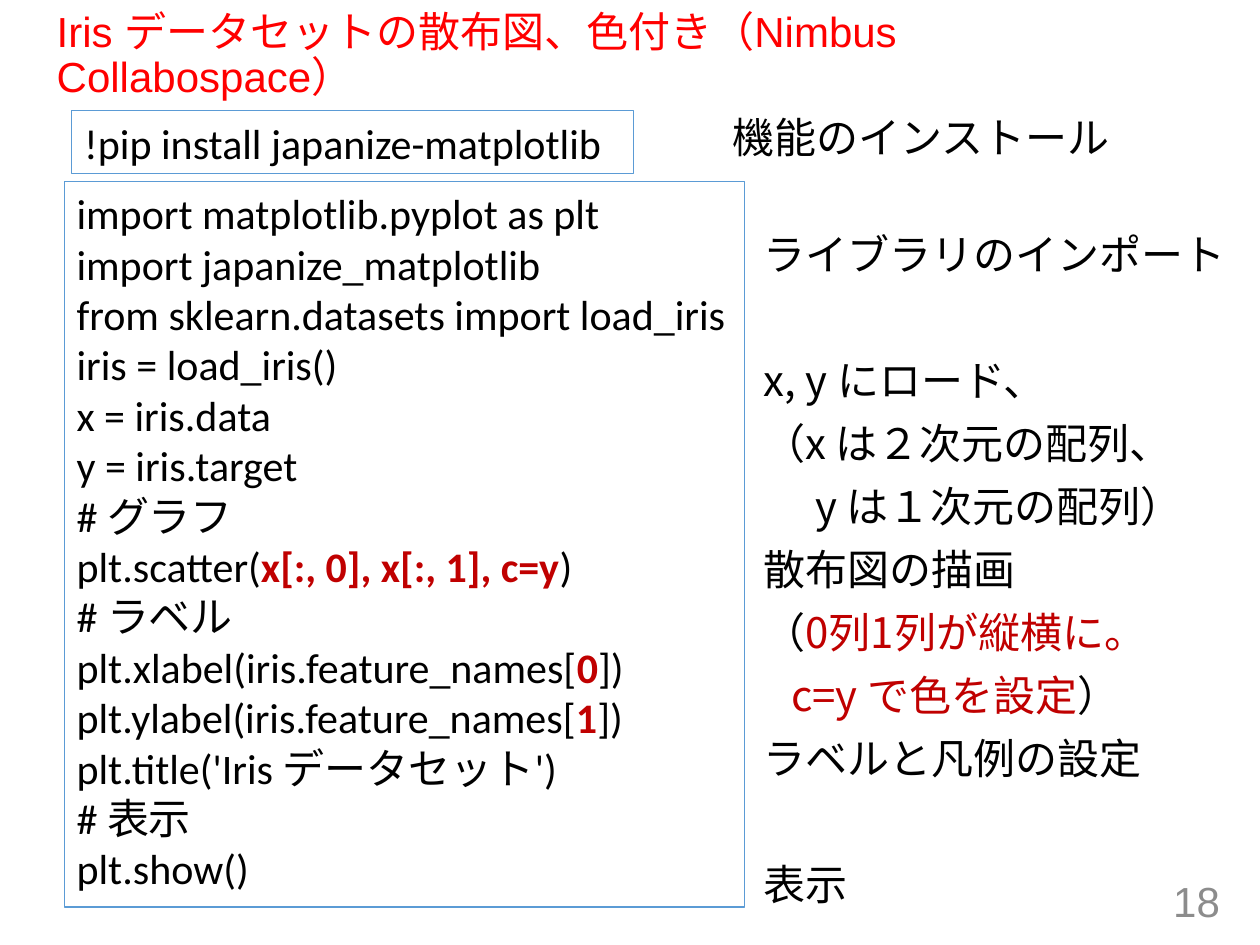
from pptx import Presentation
from pptx.dml.color import RGBColor
from pptx.enum.shapes import MSO_SHAPE
from pptx.enum.text import MSO_ANCHOR, MSO_AUTO_SIZE, PP_ALIGN
from pptx.util import Inches, Pt

COLORS = {
    "title": "FF0000",
    "text": "000000",
    "accent": "C00000",
    "border": "5B9BD5",
    "number": "8C8C8C",
}
LATIN, CODE, NOTE = "Arial", "Calibri", "Noto Sans CJK JP"
NOTE_GAP, NOTE_LINE = 10, 26
SKIPPED_LINE = NOTE_GAP + NOTE_LINE


def color(name):
    return RGBColor.from_string(COLORS[name])


class SlideBuilder:
    def __init__(self, slide, size=Pt(24)):
        self.slide = slide
        self.size = size

    def add_run(self, paragraph, text, font_name, color_name, bold=False):
        run = paragraph.add_run()
        run.text = text
        run.font.name = font_name
        run.font.size = self.size
        run.font.bold = bold
        run.font.color.rgb = color(color_name)

    def paragraphs(self, frame, count):
        yield frame.paragraphs[0]
        for _ in range(count - 1):
            yield frame.add_paragraph()

    def place(self, shape, box):
        shape.left, shape.top, shape.width, shape.height = map(Inches, box)

    def title(self, box, text):
        heading = self.slide.shapes.title
        self.place(heading, box)
        frame = heading.text_frame
        frame.word_wrap = True
        frame.auto_size = MSO_AUTO_SIZE.NONE
        frame.vertical_anchor = MSO_ANCHOR.MIDDLE
        paragraph = frame.paragraphs[0]
        paragraph.alignment = PP_ALIGN.LEFT
        paragraph.line_spacing = 0.9
        self.add_run(paragraph, text, LATIN, "title")

    def code(self, box, lines, wrap):
        panel = self.slide.shapes.add_shape(MSO_SHAPE.RECTANGLE, *map(Inches, box))
        panel.shadow.inherit = False
        panel.fill.background()
        panel.line.color.rgb = color("border")
        panel.line.width = Pt(0.75)
        frame = panel.text_frame
        frame.word_wrap = wrap
        frame.auto_size = MSO_AUTO_SIZE.SHAPE_TO_FIT_TEXT
        frame.vertical_anchor = MSO_ANCHOR.TOP
        for paragraph, parts in zip(self.paragraphs(frame, len(lines)), lines):
            paragraph.alignment = PP_ALIGN.LEFT
            for text, name in parts:
                self.add_run(paragraph, text, CODE, name, bold=name == "accent")

    def notes(self, box, lines):
        frame = self.slide.shapes.add_textbox(*map(Inches, box)).text_frame
        frame.word_wrap = True
        frame.margin_left = frame.margin_right = Inches(0.07)
        frame.margin_top = frame.margin_bottom = Inches(0.04)
        for paragraph, line in zip(self.paragraphs(frame, len(lines)), lines):
            gap, indent, parts = line
            properties = paragraph._p.get_or_add_pPr()
            properties.set("marL", str(Inches(indent)))
            properties.set("indent", "0")
            paragraph.line_spacing = Pt(NOTE_LINE)
            paragraph.space_before = Pt(gap)
            for text, name in parts:
                self.add_run(paragraph, text, NOTE, name)

    def page_number(self, box, text):
        frame = self.slide.shapes.add_textbox(*map(Inches, box)).text_frame
        frame.word_wrap = True
        frame.vertical_anchor = MSO_ANCHOR.MIDDLE
        paragraph = frame.paragraphs[0]
        paragraph.alignment = PP_ALIGN.RIGHT
        self.add_run(paragraph, text, LATIN, "number")


def plain(text):
    return [(text, "text")]


def highlighted(before, accent, after):
    return [(before, "text"), (accent, "accent"), (after, "text")]


def main():
    presentation = Presentation()
    presentation.slide_width, presentation.slide_height = Inches(10), Inches(7.5)
    slide = presentation.slides.add_slide(presentation.slide_layouts[5])
    builder = SlideBuilder(slide)

    builder.title(
        (0.35, 0.19, 9.25, 0.51),
        "Iris データセットの散布図、色付き（Nimbus Collabospace）",
    )
    builder.page_number((7.53, 6.95, 2.25, 0.4), "18")
    builder.code(
        (0.57, 0.88, 4.46, 0.5), [plain("!pip install japanize-matplotlib")], True
    )
    scatter_program = [
        plain("import matplotlib.pyplot as plt"),
        plain("import japanize_matplotlib"),
        plain("from sklearn.datasets import load_iris"),
        plain("iris = load_iris()"),
        plain("x = iris.data"),
        plain("y = iris.target"),
        plain("# グラフ"),
        highlighted("plt.scatter(", "x[:, 0], x[:, 1], c=y", ")"),
        plain("# ラベル"),
        highlighted("plt.xlabel(iris.feature_names[", "0", "])"),
        highlighted("plt.ylabel(iris.feature_names[", "1", "])"),
        plain("plt.title('Iris データセット')"),
        plain("# 表示"),
        plain("plt.show()"),
    ]
    builder.code((0.51, 1.44, 5.4, 5.76), scatter_program, False)

    builder.notes((5.74, 0.88, 3.59, 0.48), [(0, 0, plain("機能のインストール"))])
    after_skip = NOTE_GAP + SKIPPED_LINE
    explanations = [
        (0, 0, plain("ライブラリのインポート")),
        (after_skip, 0, plain("x, y にロード、")),
        (NOTE_GAP, 0, plain("（x は２次元の配列、")),
        (NOTE_GAP, 0.41, plain("y は１次元の配列）")),
        (NOTE_GAP, 0, plain("散布図の描画")),
        (NOTE_GAP, 0, [("（", "text"), ("0列1列が縦横に。", "accent")]),
        (NOTE_GAP, 0.22, [("c=y で色を設定", "accent"), ("）", "text")]),
        (NOTE_GAP, 0, plain("ラベルと凡例の設定")),
        (after_skip, 0, plain("表示")),
    ]
    builder.notes((5.99, 1.81, 3.86, 0.48), explanations)
    presentation.save("out.pptx")


if __name__ == "__main__":
    main()
